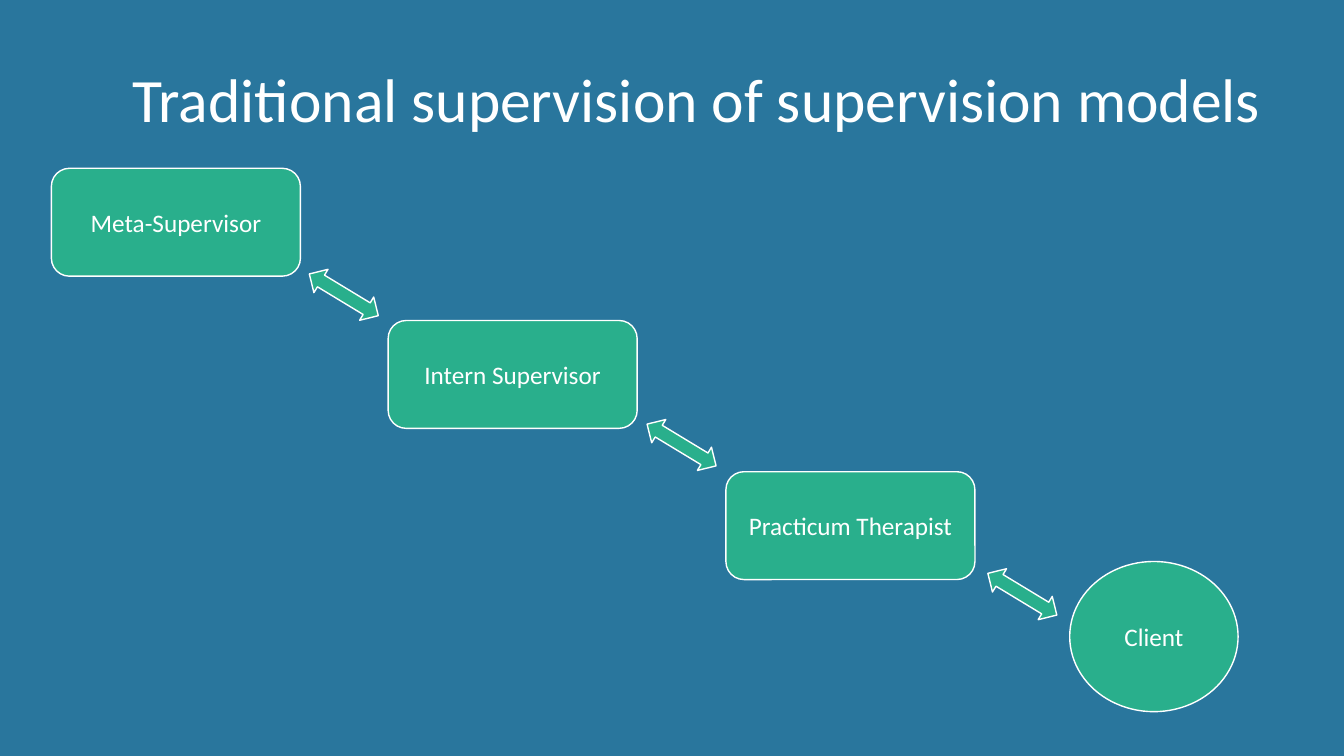
from dataclasses import dataclass

from pptx import Presentation
from pptx.dml.color import RGBColor
from pptx.enum.shapes import MSO_SHAPE
from pptx.enum.text import MSO_ANCHOR, PP_ALIGN
from pptx.util import Inches, Pt


@dataclass(frozen=True)
class Theme:
    background: RGBColor = RGBColor(0x29, 0x76, 0x9D)
    fill: RGBColor = RGBColor(0x29, 0xAF, 0x8C)
    light: RGBColor = RGBColor(0xFF, 0xFF, 0xFF)
    font: str = "Calibri"
    title_size: int = 44
    label_size: int = 18
    line_width: int = 1


class SlideBuilder:
    def __init__(self, prs, theme):
        self.theme = theme
        self.s = prs.slides.add_slide(prs.slide_layouts[6])
        bg = self.s.background.fill
        bg.solid()
        bg.fore_color.rgb = theme.background

    def set_label(self, tf, text, size):
        tf.word_wrap = True
        tf.vertical_anchor = MSO_ANCHOR.MIDDLE
        tf.text = text
        p = tf.paragraphs[0]
        p.alignment = PP_ALIGN.CENTER
        r = p.runs[0]
        r.font.name = self.theme.font
        r.font.size = Pt(size)
        r.font.color.rgb = self.theme.light
        return p

    def title(self, text, x, y, w, h, indent):
        tf = self.s.shapes.add_textbox(
            Inches(x), Inches(y), Inches(w), Inches(h)).text_frame
        tf.margin_left = Inches(indent)
        p = self.set_label(tf, text, self.theme.title_size)
        p.line_spacing = 0.9

    def shape(self, kind, x, y, w, h):
        sp = self.s.shapes.add_shape(
            kind, Inches(x), Inches(y), Inches(w), Inches(h))
        sp.shadow.inherit = False
        sp.fill.solid()
        sp.fill.fore_color.rgb = self.theme.fill
        sp.line.color.rgb = self.theme.light
        sp.line.width = Pt(self.theme.line_width)
        return sp

    def node(self, kind, text, x, y, w, h):
        sp = self.shape(kind, x, y, w, h)
        self.set_label(sp.text_frame, text, self.theme.label_size)

    def arrow(self, x, y):
        sp = self.shape(MSO_SHAPE.LEFT_RIGHT_ARROW, x, y, 0.8, 0.27)
        sp.rotation = 31.2


def main():
    prs = Presentation()
    prs.slide_width = Inches(13.33)
    prs.slide_height = Inches(7.5)
    slide = SlideBuilder(prs, Theme())

    # Title
    slide.title("Traditional supervision of supervision models",
                0.51, 0.29, 12.31, 1.45, indent=0.6)

    # Supervision levels, stepping down to the client
    levels = [("Meta-Supervisor", 0.51, 1.67),
              ("Intern Supervisor", 3.85, 3.18),
              ("Practicum Therapist", 7.2, 4.68)]
    for text, x, y in levels:
        slide.node(MSO_SHAPE.ROUNDED_RECTANGLE, text, x, y, 2.47, 1.07)
    slide.node(MSO_SHAPE.OVAL, "Client", 10.61, 5.57, 1.67, 1.49)

    # Two-way arrows between levels
    for x, y in [(3.01, 2.79), (6.36, 4.28), (9.74, 5.76)]:
        slide.arrow(x, y)

    prs.save("out.pptx")


if __name__ == "__main__":
    main()
